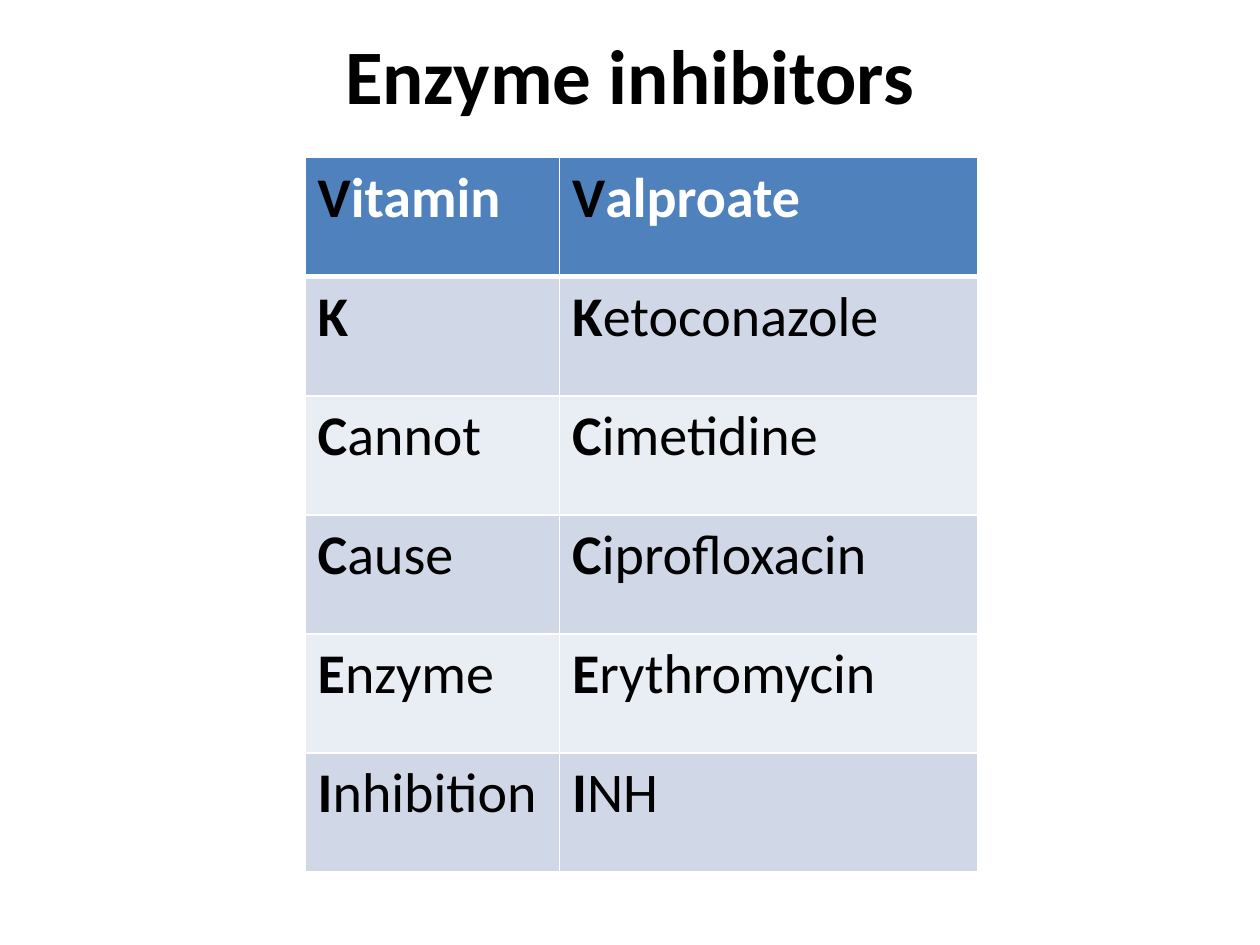
"""Build a slide with a mnemonic table of enzyme inhibitors."""
import pptx
import pptx.dml.color
import pptx.enum.text
import pptx.oxml
import pptx.oxml.ns
import pptx.util
from pptx.util import Cm

BLACK = pptx.dml.color.RGBColor(0x00, 0x00, 0x00)
WHITE = pptx.dml.color.RGBColor(0xFF, 0xFF, 0xFF)
HEADER_BLUE = pptx.dml.color.RGBColor(0x4F, 0x81, 0xBD)
BANDS = (
    pptx.dml.color.RGBColor(0xE9, 0xED, 0xF4),
    pptx.dml.color.RGBColor(0xD0, 0xD8, 0xE8),
)

TITLE = "Enzyme inhibitors"
MNEMONIC = [
    ("Vitamin", "Valproate"),
    ("K", "Ketoconazole"),
    ("Cannot", "Cimetidine"),
    ("Cause", "Ciprofloxacin"),
    ("Enzyme", "Erythromycin"),
    ("Inhibition", "INH"),
]
COLUMN_WIDTHS = (Cm(5.13), Cm(8.43))
ROW_HEIGHT = Cm(2.4)

TITLE_FORMAT = {"name": "Calibri", "size": pptx.util.Pt(44), "bold": True}
INITIAL_FORMAT = {"name": "Calibri", "size": pptx.util.Pt(32), "bold": True}


def add_run(paragraph, text, formats, color):
    run = paragraph.add_run()
    run.text = text
    for name, value in formats.items():
        setattr(run.font, name, value)
    run.font.color.rgb = color


def add_borders(cell, widths):
    properties = cell._tc.get_or_add_tcPr()
    for side, width in widths.items():
        properties.append(pptx.oxml.parse_xml(
            f'<a:ln{side} {pptx.oxml.ns.nsdecls("a")} w="{pptx.util.Pt(width)}">'
            f'<a:solidFill><a:srgbClr val="{WHITE}"/></a:solidFill></a:ln{side}>'
        ))


def add_title(slide):
    box = slide.shapes.add_textbox(Cm(1.27), Cm(0), Cm(22.86), Cm(2.97))
    frame = box.text_frame
    frame.word_wrap = True
    frame.vertical_anchor = pptx.enum.text.MSO_ANCHOR.MIDDLE
    paragraph = frame.paragraphs[0]
    paragraph.alignment = pptx.enum.text.PP_ALIGN.CENTER
    add_run(paragraph, TITLE, TITLE_FORMAT, BLACK)


def fill_cell(cell, text, row):
    header = row == 0
    add_borders(cell, {"L": 1, "R": 1, "T": 3 if row == 1 else 1, "B": 3 if header else 1})
    cell.fill.solid()
    cell.fill.fore_color.rgb = HEADER_BLUE if header else BANDS[row % 2]
    paragraph = cell.text_frame.paragraphs[0]
    add_run(paragraph, text[0], INITIAL_FORMAT, BLACK)
    if text[1:]:
        add_run(paragraph, text[1:], INITIAL_FORMAT | {"bold": header}, WHITE if header else BLACK)


def add_mnemonic_table(slide):
    table = slide.shapes.add_table(
        len(MNEMONIC), len(COLUMN_WIDTHS), Cm(6.15), Cm(3.18),
        sum(COLUMN_WIDTHS), ROW_HEIGHT * len(MNEMONIC),
    ).table
    for column, width in zip(table.columns, COLUMN_WIDTHS):
        column.width = width
    for row, words in enumerate(MNEMONIC):
        table.rows[row].height = ROW_HEIGHT
        for column, text in enumerate(words):
            fill_cell(table.cell(row, column), text, row)


def main():
    presentation = pptx.Presentation()
    presentation.slide_width = Cm(25.4)
    presentation.slide_height = Cm(19.05)
    slide = presentation.slides.add_slide(presentation.slide_layouts[6])
    add_title(slide)
    add_mnemonic_table(slide)
    presentation.save("out.pptx")


if __name__ == "__main__":
    main()
